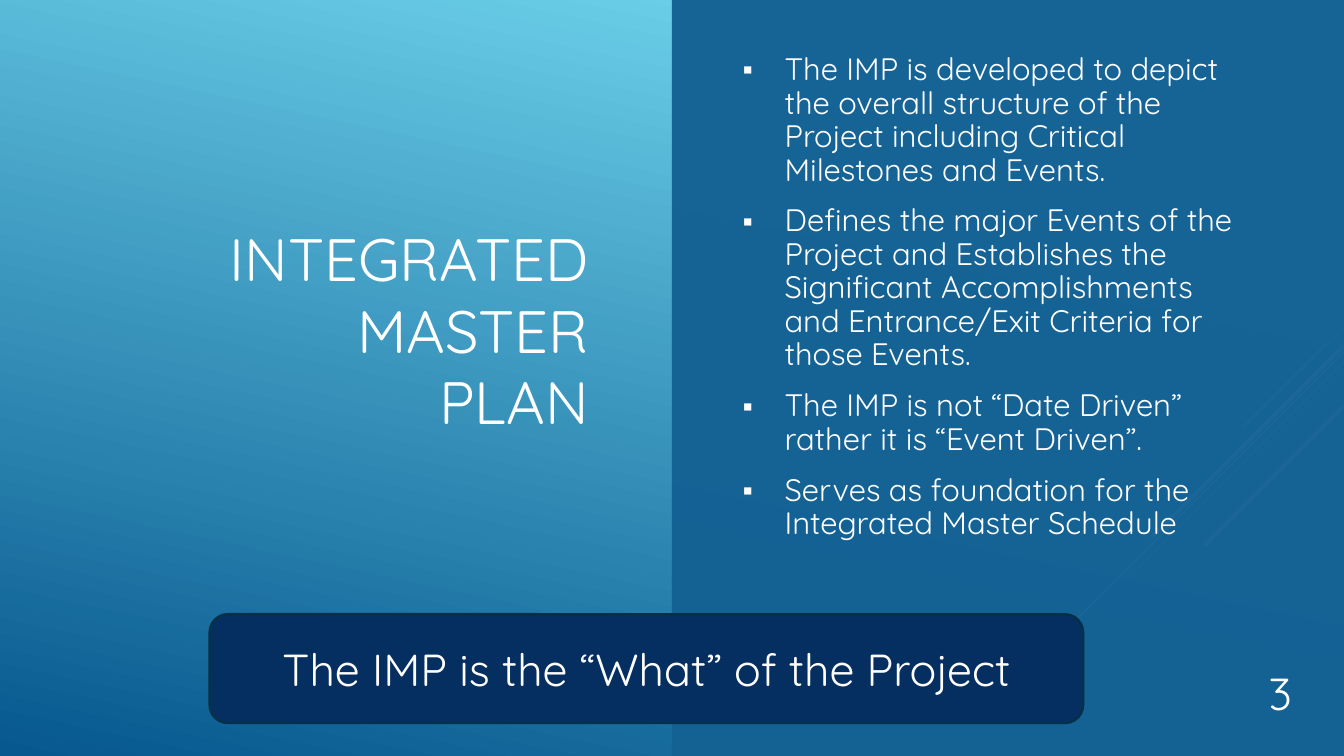
from typing import NamedTuple

from lxml.etree import SubElement
from pptx import Presentation
from pptx.dml.color import RGBColor
from pptx.enum.shapes import MSO_CONNECTOR, MSO_SHAPE
from pptx.enum.text import MSO_ANCHOR, PP_ALIGN
from pptx.oxml.ns import qn
from pptx.util import Inches, Pt

FONT = "Quicksand"
WIDE, HIGH = 10, 10 * 9 / 16
COLORS = {
    "sky": "6ED2EB",
    "deep": "06588E",
    "panel": "146194",
    "navy": "052F61",
    "edge": "043148",
    "white": "FFFFFF",
}


class Box(NamedTuple):
    left: float
    top: float
    width: float
    height: float


class Ray(NamedTuple):
    """A 45-degree line from the right edge down to the left."""
    top: float
    run: float
    weight: float


RAYS = [
    Ray(2.43, 0.75, 0.75),
    Ray(2.62, 2.45, 0.75),
    Ray(2.69, 1.56, 0.75),
    Ray(2.57, 1.43, 2.25),
    Ray(3.02, 1.04, 2.25),
]
POINTS = [
    "The IMP is developed to depict the overall structure of the Project "
    "including Critical Milestones and Events.",
    "Defines the major Events of the Project and Establishes the Significant "
    "Accomplishments and Entrance/Exit Criteria for those Events.",
    "The IMP is not “Date Driven” rather it is “Event Driven”.",
    "Serves as foundation for the Integrated Master Schedule",
]


def color(name: str) -> RGBColor:
    return RGBColor.from_string(COLORS[name])


def place(box: Box) -> list:
    return [Inches(n) for n in box]


def write(shape, lines: list, size: float, align, anchor) -> None:
    frame = shape.text_frame
    frame.word_wrap = True
    frame.vertical_anchor = anchor
    frame.text = "\n".join(lines)
    for para in frame.paragraphs:
        para.alignment = align
        para.font.size = Pt(size)
        para.font.name = FONT
        para.font.color.rgb = color("white")


def add_text(slide, box: Box, lines: list, size: float, align, anchor):
    shape = slide.shapes.add_textbox(*place(box))
    write(shape, lines, size, align, anchor)
    return shape.text_frame


def add_block(slide, kind, box: Box, fill: str):
    shape = slide.shapes.add_shape(kind, *place(box))
    shape.shadow.inherit = False
    shape.fill.solid()
    shape.fill.fore_color.rgb = color(fill)
    shape.line.fill.background()
    return shape


def add_ray(slide, ray: Ray) -> None:
    line = slide.shapes.add_connector(
        MSO_CONNECTOR.STRAIGHT, Inches(WIDE), Inches(ray.top),
        Inches(WIDE - ray.run), Inches(ray.top + ray.run))
    line.line.color.rgb = color("white")
    line.line.width = Pt(ray.weight)
    SubElement(line._element.spPr, qn("a:effectLst"))


def add_bullet(para) -> None:
    para.line_spacing = 0.9
    para.space_before = Pt(3.3)
    para.space_after = Pt(6)
    props = para._p.get_or_add_pPr()
    props.set("marL", str(Inches(0.31)))
    props.set("indent", str(-Inches(0.31)))
    tint = SubElement(props, qn("a:buClr"))
    SubElement(tint, qn("a:srgbClr"), val=COLORS["white"])
    SubElement(props, qn("a:buSzPct"), val="80000")
    SubElement(props, qn("a:buFont"), typeface=FONT)
    SubElement(props, qn("a:buChar"), char="▪")


def main() -> None:
    deck = Presentation()
    deck.slide_width, deck.slide_height = Inches(WIDE), Inches(HIGH)
    slide = deck.slides.add_slide(deck.slide_layouts[6])

    # Background gradient
    back = slide.background.fill
    back.gradient()
    back.gradient_angle = 258
    for stop, name, pos in zip(back.gradient_stops, ("sky", "deep"), (0.1, 1)):
        stop.color.rgb = color(name)
        stop.position = pos

    # Rays, seen faintly through the panel
    for ray in RAYS:
        add_ray(slide, ray)

    # Title
    add_text(slide, Box(0.53, 0.56, 3.95, 3.78),
             ["INTEGRATED MASTER\v PLAN"], 32,
             PP_ALIGN.RIGHT, MSO_ANCHOR.MIDDLE)

    # Right panel
    panel = add_block(slide, MSO_SHAPE.RECTANGLE,
                      Box(WIDE / 2, 0, WIDE / 2, HIGH), "panel")
    tint = panel.fill._xPr.find(qn("a:solidFill"))[0]
    SubElement(tint, qn("a:alpha"), val="97000")

    # Bullet points
    points = add_text(slide, Box(5.43, 0.32, 4, 4.02), POINTS, 16.6,
                      PP_ALIGN.LEFT, MSO_ANCHOR.TOP)
    points.margin_top = Inches(0.08)
    for para in points.paragraphs:
        add_bullet(para)

    # Key message
    banner = add_block(slide, MSO_SHAPE.ROUNDED_RECTANGLE,
                       Box(1.56, 4.57, 6.5, 0.81), "navy")
    banner.line.color.rgb = color("edge")
    banner.line.width = Pt(1.25)
    write(banner, ["The IMP is the “What” of the Project"], 24,
          PP_ALIGN.CENTER, MSO_ANCHOR.MIDDLE)

    # Slide number
    add_text(slide, Box(8.77, 4.85, 0.94, 0.55), ["3"], 24,
             PP_ALIGN.RIGHT, MSO_ANCHOR.BOTTOM)

    deck.save("out.pptx")


if __name__ == "__main__":
    main()
